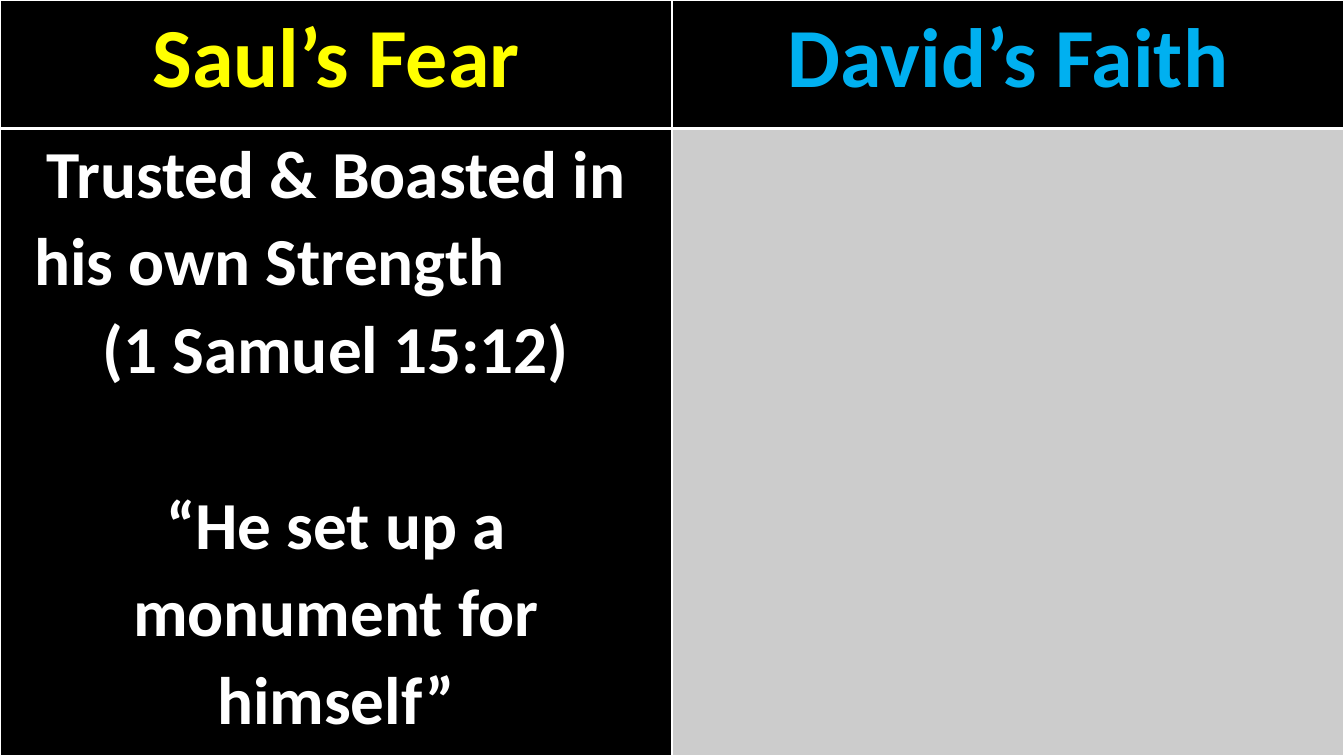
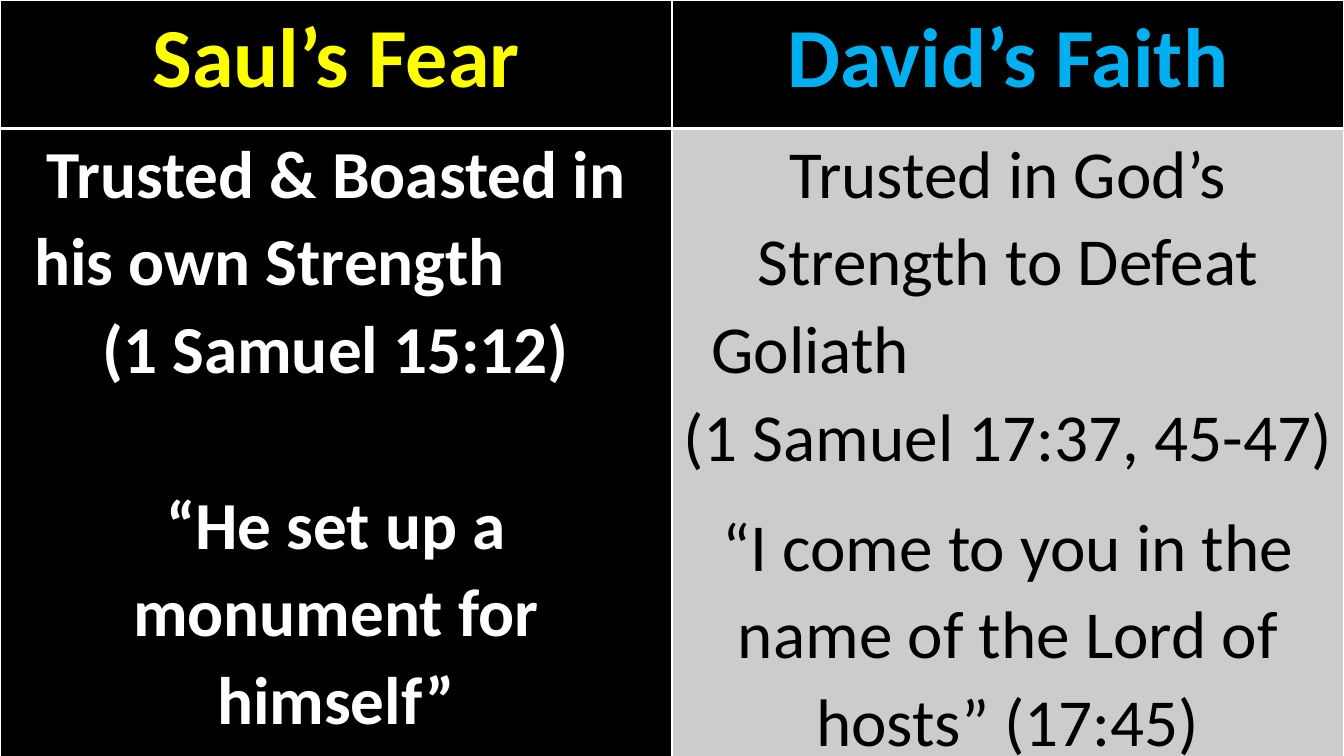
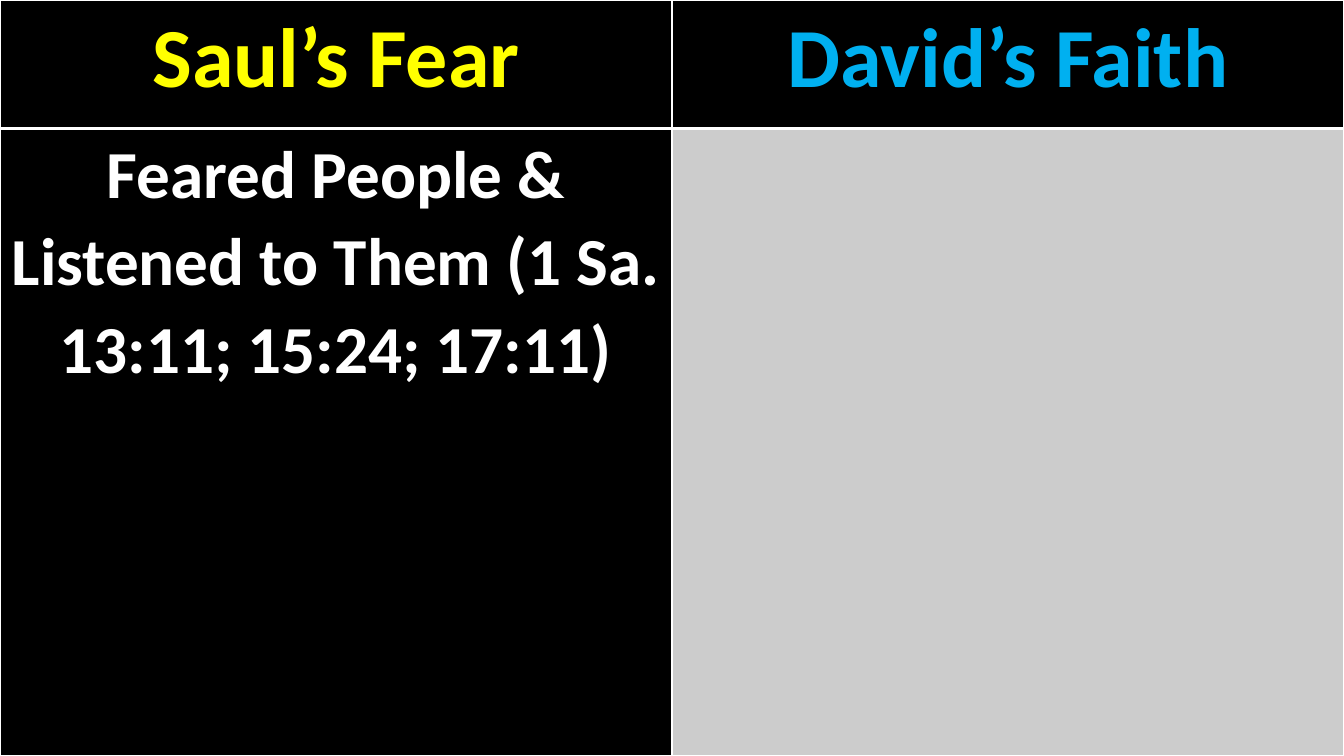
from lxml.etree import SubElement
from pptx import Presentation
from pptx.dml.color import RGBColor
from pptx.enum.text import PP_ALIGN as Align
from pptx.oxml.ns import qn
from pptx.util import Inches, Pt

THEME = {
    "font": "Calibri", "heading_size": 60, "body_size": 48,
    "black": "000000", "white": "FFFFFF", "grey": "CCCCCC",
    "yellow": "FFFF00", "blue": "00B0F0",
    "line_spacing": 1.07, "side_margin": 0.07,
    "thin": 1, "thick": 3,
}
WIDTH, HEIGHT = 13.33, 7.5
HEADER_SHARE = 0.17
BODY_LINE, SMALL_LINE = 62.7, 15.7  # points of space before a quotation

# Content: each column is a heading and its look, each body a list of
# (text, paragraph format) pairs
COLUMNS = [
    {"heading": "Saul’s Fear", "accent": "yellow",
     "fill": "black", "color": "white", "bold": True},
    {"heading": "David’s Faith", "accent": "blue",
     "fill": "grey", "color": "black", "bold": False},
]
SAUL_STRENGTH = [
    ("Trusted & Boasted in", {}),
    ("his own Strength", {"indent": 0.27}),
    ("(1 Samuel 15:12)", {}),
    ("“He set up a monument for himself”", {"before": BODY_LINE}),
]
DAVID_STRENGTH = [
    ("Trusted in God’s Strength to Defeat", {}),
    ("Goliath", {"indent": 0.32}),
    ("(1 Samuel 17:37, 45-47)", {}),
    ("“I come to you in the name of the Lord of hosts” (17:45)",
     {"before": SMALL_LINE}),
]
SAUL_PEOPLE = [
    ("Feared People & Listened to Them (1 Sa. 13:11; 15:24; 17:11)", {}),
]
SLIDES = [
    (SAUL_STRENGTH, []),
    (SAUL_STRENGTH, DAVID_STRENGTH),
    (SAUL_PEOPLE, []),
]


def color(name):
    return RGBColor.from_string(THEME[name])


def write(paragraph, text, *, size, ink, bold, before=0, indent=None):
    """Centred text, or left-aligned text when an indent is given."""
    paragraph.alignment = Align.CENTER if indent is None else Align.LEFT
    paragraph.line_spacing = THEME["line_spacing"]
    if before:
        paragraph.space_before = Pt(before)
    if indent is not None:
        properties = paragraph._p.get_or_add_pPr()
        properties.set("marL", str(Inches(indent)))
        properties.set("indent", "0")
    run = paragraph.add_run()
    run.text = text
    font = run.font
    font.name, font.size, font.bold = THEME["font"], Pt(size), bold
    font.color.rgb = color(ink)


def format_cell(cell, fill, **edges):
    """Set margins, borders and fill; edges override the thin border."""
    cell.margin_left = cell.margin_right = Inches(THEME["side_margin"])
    cell.margin_top = cell.margin_bottom = 0
    properties = cell._tc.get_or_add_tcPr()
    for side in "LRTB":
        width = THEME[edges.get(side, "thin")]
        line = SubElement(properties, qn(f"a:ln{side}"), w=str(Pt(width)))
        solid = SubElement(line, qn("a:solidFill"))
        SubElement(solid, qn("a:srgbClr"), val=THEME["white"])
    cell.fill.solid()
    cell.fill.fore_color.rgb = color(fill)


def add_comparison(slide, bodies):
    table = slide.shapes.add_table(
        2, len(COLUMNS), 0, 0, Inches(WIDTH), Inches(HEIGHT)).table
    table.horz_banding = False
    for row, share in zip(table.rows, (HEADER_SHARE, 1 - HEADER_SHARE)):
        row.height = Inches(HEIGHT * share)

    for index, (column, body) in enumerate(zip(COLUMNS, bodies)):
        # Heading
        header = table.cell(0, index)
        format_cell(header, "black", B="thick")
        write(header.text_frame.paragraphs[0], column["heading"],
              size=THEME["heading_size"], ink=column["accent"], bold=True)
        # Body
        cell = table.cell(1, index)
        format_cell(cell, column["fill"], T="thick")
        frame = cell.text_frame
        for number, (text, layout) in enumerate(body):
            paragraph = frame.add_paragraph() if number else frame.paragraphs[0]
            write(paragraph, text, size=THEME["body_size"],
                  ink=column["color"], bold=column["bold"], **layout)


def main():
    presentation = Presentation()
    presentation.slide_width = Inches(WIDTH)
    presentation.slide_height = Inches(HEIGHT)
    # Shared black background
    background = presentation.slide_master.background.fill
    background.solid()
    background.fore_color.rgb = color("black")
    blank = presentation.slide_layouts[6]
    for bodies in SLIDES:
        add_comparison(presentation.slides.add_slide(blank), bodies)
    presentation.save("out.pptx")


if __name__ == "__main__":
    main()
